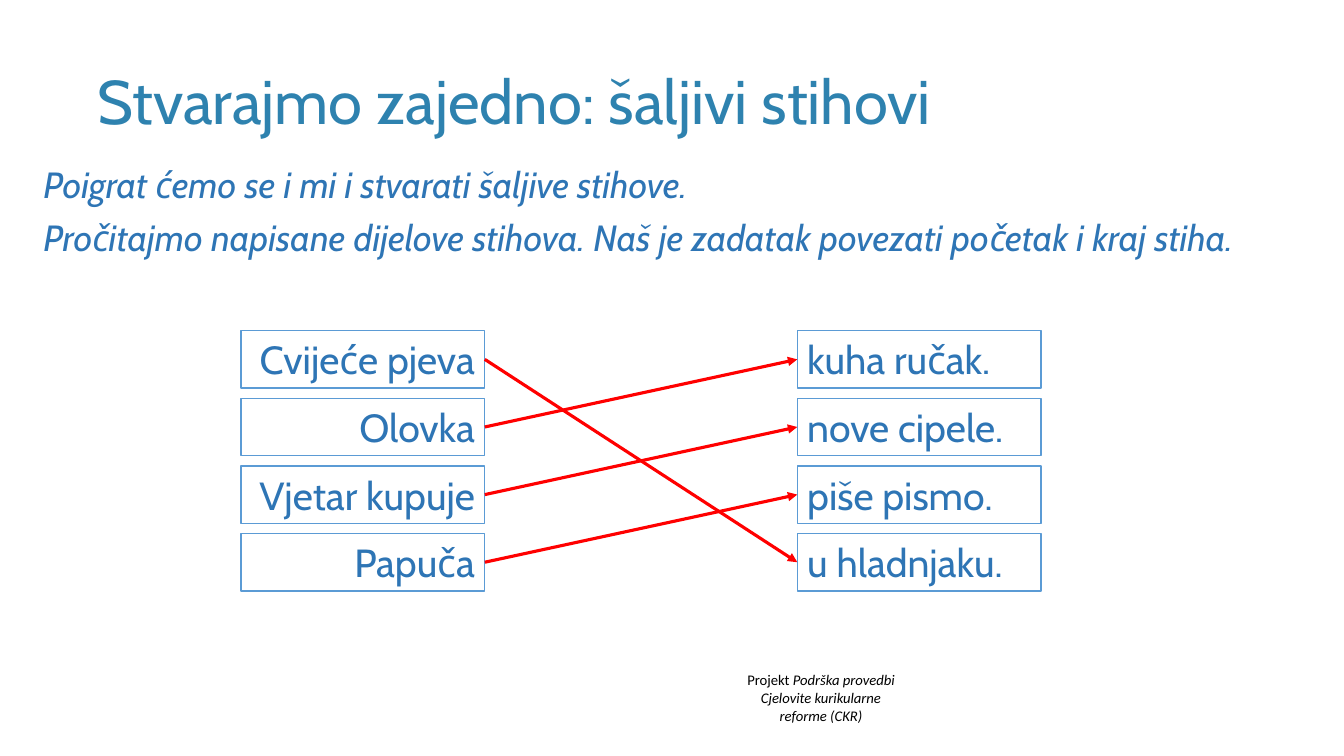
from dataclasses import dataclass

from lxml.etree import SubElement
from pptx import Presentation
from pptx.dml.color import RGBColor as Color
from pptx.enum.shapes import MSO_CONNECTOR as Connector, MSO_SHAPE as Shape
from pptx.enum.text import MSO_ANCHOR as Anchor, PP_ALIGN as Align
from pptx.oxml.ns import qn
from pptx.util import Pt


@dataclass(frozen=True)
class Theme:
    """Colours, fonts and type sizes of the slide."""
    heading: Color = Color.from_string("2E82AF")
    text: Color = Color.from_string("2E75B5")
    border: Color = Color.from_string("5B9BD5")
    arrow: Color = Color.from_string("FF0000")
    paper: Color = Color.from_string("FFFFFF")
    ink: Color = Color.from_string("000000")
    font: str = "Cabin"
    footer_font: str = "Calibri"
    title_size: float = 44
    body_size: float = 26
    card_size: float = 28
    footer_size: float = 10.5


THEME = Theme()
BEGINNINGS = ["Cvijeće pjeva", "Olovka", "Vjetar kupuje", "Papuča"]
ENDINGS = ["kuha ručak.", "nove cipele.", "piše pismo.", "u hladnjaku."]
MATCHES = [3, 0, 1, 2]


def write(para, text, *, size, color=THEME.text, font=THEME.font, italic=False,
          align=Align.LEFT, spacing=1.0, before=0):
    """Add one formatted span to a paragraph and set its layout."""
    para.alignment, para.line_spacing, para.space_before = align, spacing, Pt(before)
    span = para.add_run()
    span.text = text
    span.font.size, span.font.name = Pt(size), font
    span.font.italic, span.font.color.rgb = italic, color


def add_frame(page, left, top, width, height, anchor=Anchor.TOP):
    """Add a wrapping text box and return its text frame."""
    frame = page.shapes.add_textbox(Pt(left), Pt(top), Pt(width), Pt(height)).text_frame
    frame.word_wrap, frame.vertical_anchor = True, anchor
    return frame


def add_title(page, left, top, width, height):
    """Place the slide title, centred vertically in its box."""
    frame = add_frame(page, left, top, width, height, Anchor.MIDDLE)
    write(frame.paragraphs[0], "Stvarajmo zajedno: šaljivi stihovi",
          size=THEME.title_size, color=THEME.heading, spacing=0.9)


def add_instructions(page, left, top, width, height):
    """Place the two lines that explain the task."""
    frame = add_frame(page, left, top, width, height)
    style = dict(size=THEME.body_size, italic=True, spacing=0.9)
    write(frame.paragraphs[0], "Poigrat ćemo se i mi i stvarati šaljive stihove.", **style)
    write(frame.add_paragraph(), "Pročitajmo napisane dijelove stihova. "
          "Naš je zadatak povezati početak i kraj stiha.", before=10, **style)


def add_footer(page, left, top, width, height):
    """Place the project name at the foot of the page."""
    frame = add_frame(page, left, top, width, height)
    style = dict(size=THEME.footer_size, color=THEME.ink,
                 font=THEME.footer_font, align=Align.CENTER)
    first, second = frame.paragraphs[0], frame.add_paragraph()
    write(first, "Projekt ", **style)
    write(first, "Podrška provedbi", italic=True, **style)
    write(second, "Cjelovite kurikularne", italic=True, **style)
    second.add_line_break()
    write(second, "reforme (CKR)", italic=True, **style)


def add_card(page, text, left, top, width, height, align):
    """Place one outlined card holding part of a verse."""
    card = page.shapes.add_shape(Shape.RECTANGLE, Pt(left), Pt(top), Pt(width), Pt(height))
    card.shadow.inherit = False
    card.fill.solid()
    card.fill.fore_color.rgb = THEME.paper
    card.line.color.rgb, card.line.width = THEME.border, Pt(1)
    card.text_frame.word_wrap = True
    card.text_frame.vertical_anchor = Anchor.TOP
    write(card.text_frame.paragraphs[0], text, size=THEME.card_size, align=align)
    return card


def add_arrow(page, start, end):
    """Join the right side of one card to the left side of another."""
    arrow = page.shapes.add_connector(Connector.STRAIGHT, 0, 0, 0, 0)
    arrow.begin_connect(start, 3)
    arrow.end_connect(end, 1)
    arrow.line.color.rgb, arrow.line.width = THEME.arrow, Pt(2.25)
    SubElement(arrow.line._get_or_add_ln(), qn("a:tailEnd"), type="triangle")
    SubElement(arrow._element.spPr, qn("a:effectLst"))


def add_matching(page, left, top, width, height):
    """Place both columns of cards and the arrows that match them."""
    card_width, card_height = 174.2, 41
    pitch = (height - card_height) / (len(BEGINNINGS) - 1)
    columns = [(BEGINNINGS, left, Align.RIGHT),
               (ENDINGS, left + width - card_width, Align.LEFT)]
    starts, ends = [
        [add_card(page, text, x, top + row * pitch, card_width, card_height, align)
         for row, text in enumerate(texts)]
        for texts, x, align in columns]
    for start, match in zip(starts, MATCHES):
        add_arrow(page, start, ends[match])


def main():
    """Build the slide and save the deck."""
    deck = Presentation()
    deck.slide_width, deck.slide_height = Pt(960), Pt(540)
    page = deck.slides.add_slide(deck.slide_layouts[6])
    add_footer(page, 503.3, 475.9, 166.3, 45.4)
    add_title(page, 62.6, 22.3, 828, 104.4)
    add_instructions(page, 23.8, 115.9, 905.8, 108.7)
    add_matching(page, 172.1, 236.2, 571.6, 185.9)
    deck.save("out.pptx")


if __name__ == "__main__":
    main()
